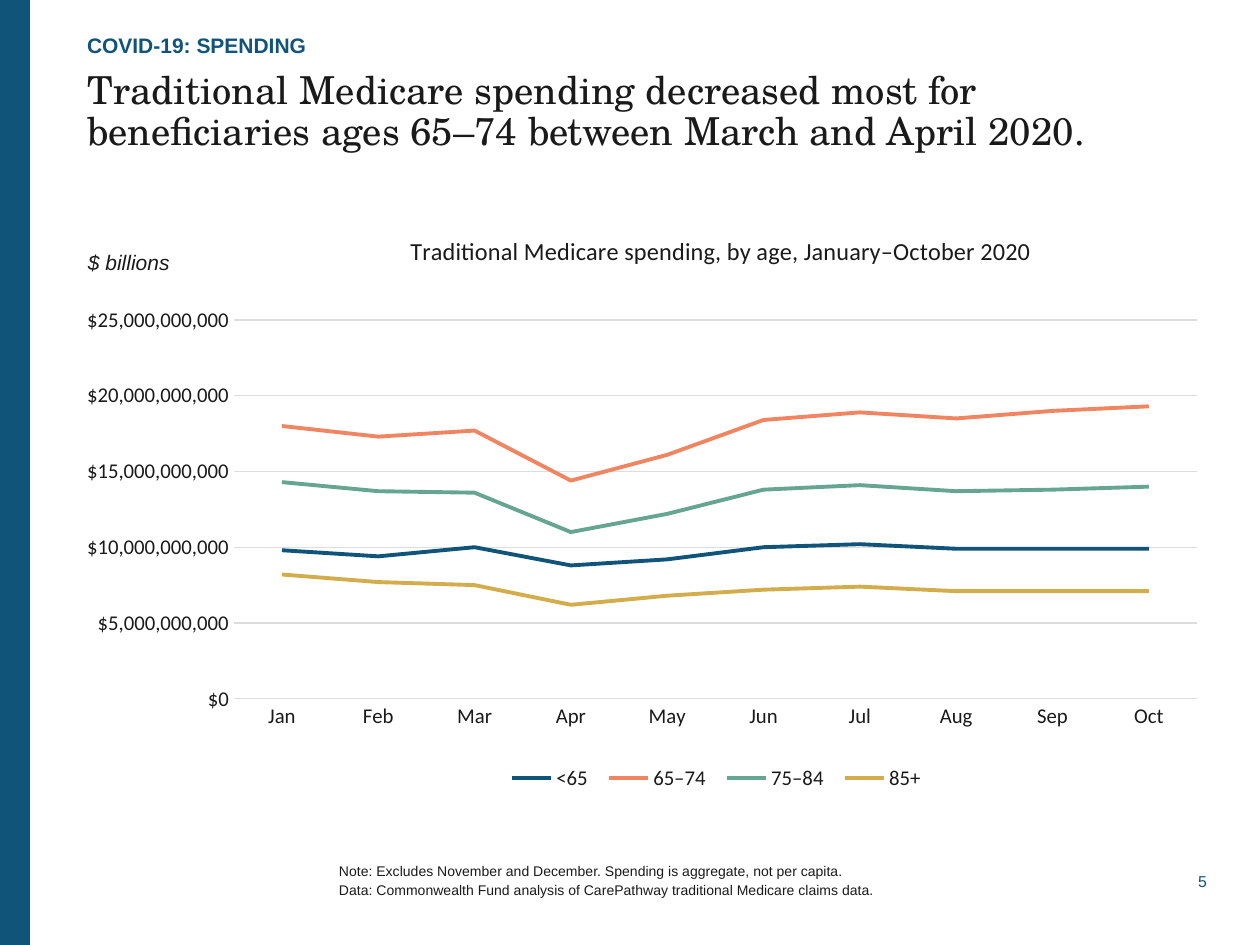
from lxml import etree
from pptx import Presentation
from pptx.chart.data import CategoryChartData
from pptx.dml.color import RGBColor
from pptx.enum.chart import XL_CHART_TYPE, XL_LEGEND_POSITION, XL_MARKER_STYLE, XL_TICK_MARK
from pptx.enum.shapes import MSO_SHAPE
from pptx.enum.text import MSO_ANCHOR, MSO_AUTO_SIZE, PP_ALIGN
from pptx.oxml.ns import qn
from pptx.util import Pt

LINE = XL_CHART_TYPE.LINE
BELOW = XL_LEGEND_POSITION.BOTTOM
PLAIN = XL_MARKER_STYLE.NONE
NO_TICK = XL_TICK_MARK.NONE
RECT = MSO_SHAPE.RECTANGLE
TOP, MID, LOW = MSO_ANCHOR.TOP, MSO_ANCHOR.MIDDLE, MSO_ANCHOR.BOTTOM
FIXED = MSO_AUTO_SIZE.NONE
LEFT, RIGHT = PP_ALIGN.LEFT, PP_ALIGN.RIGHT

# Content
TOPIC = "COVID-19: SPENDING"
HEAD = ("Traditional Medicare spending decreased most for beneficiaries "
        "ages 65–74 between March and April 2020.")
NOTES = [
    "Note: Excludes November and December. Spending is aggregate, not per capita.",
    "Data: Commonwealth Fund analysis of CarePathway traditional Medicare claims data.",
]
UNIT = "$ billions"
PAGE = "5"
NAME = "Traditional Medicare spending, by age, January–October 2020"
MONTHS = ["Jan", "Feb", "Mar", "Apr", "May", "Jun", "Jul", "Aug", "Sep", "Oct"]
BILLION = 10 ** 9
AGES = [  # name, colour, billions of dollars
    ("<65", "115479", [9.8, 9.4, 10, 8.8, 9.2, 10, 10.2, 9.9, 9.9, 9.9]),
    ("65–74", "F08661", [18, 17.3, 17.7, 14.4, 16.1, 18.4, 18.9, 18.5, 19, 19.3]),
    ("75–84", "65A591", [14.3, 13.7, 13.6, 11, 12.2, 13.8, 14.1, 13.7, 13.8, 14]),
    ("85+", "D3AC4C", [8.2, 7.7, 7.5, 6.2, 6.8, 7.2, 7.4, 7.1, 7.1, 7.1]),
]

# Style and places, in px
INK, BLUE, GREY = "1A1A1A", "115479", "DDDDDD"
SANS, SERIF, LABEL = "Arial", "TeX Gyre Schola", "Calibri"
WIDE, HIGH = 1260, 945
CHART = (87, 200, 1115, 607)
PLOT = (223, 320, 974, 379)
TITLE = (397, 229)
LEGEND = (490, 762, 442, 32)


def px(n):
    return round(n * 914400 / 126)


def rgb(code):
    return RGBColor.from_string(code)


def style(font, size, color=INK, face=LABEL, bold=False, italic=False):
    font.size, font.name = Pt(size), face
    font.bold, font.italic = bold, italic
    font.color.rgb = rgb(color)


def write(shape, box, lines, size, color=INK, face=SANS, anchor=TOP,
          align=LEFT, lead=1.0, gap=0, wrap=True, **look):
    shape.left, shape.top, shape.width, shape.height = map(px, box)
    frame = shape.text_frame
    frame.auto_size, frame.word_wrap = FIXED, wrap
    frame.vertical_anchor = anchor
    frame.margin_left = frame.margin_right = 0
    frame.margin_top = frame.margin_bottom = 0
    for i, line in enumerate(lines):
        para = frame.add_paragraph() if i else frame.paragraphs[0]
        para.alignment, para.line_spacing = align, lead
        para.space_before = Pt(gap if i else 0)
        run = para.add_run()
        run.text = line
        style(run.font, size, color, face, **look)


def place(node, index, box, inner=False):
    """Set a chart part's layout from its px box on the slide."""
    for old in node.findall(qn("c:layout")):
        node.remove(old)
    layout = etree.Element(qn("c:layout"))
    manual = etree.SubElement(layout, qn("c:manualLayout"))
    x, y, w, h = CHART
    parts = [("xMode", "edge"), ("yMode", "edge"),
             ("x", (box[0] - x) / w), ("y", (box[1] - y) / h)]
    if inner:
        parts.insert(0, ("layoutTarget", "inner"))
    if len(box) == 4:
        parts += [("w", box[2] / w), ("h", box[3] / h)]
    for tag, val in parts:
        etree.SubElement(manual, qn("c:" + tag)).set("val", str(val))
    node.insert(index, layout)


def draw_chart(slide):
    data = CategoryChartData(number_format='"$"#,##0')
    data.categories = MONTHS
    for name, _, vals in AGES:
        data.add_series(name, [round(v * BILLION) for v in vals])
    chart = slide.shapes.add_chart(LINE, *map(px, CHART), data).chart
    style(chart.font, 10)

    # Title and legend
    chart.has_title = True
    run = chart.chart_title.text_frame.paragraphs[0].add_run()
    run.text = NAME
    style(run.font, 14)
    chart.has_legend = True
    chart.legend.position = BELOW
    chart.legend.include_in_layout = False
    style(chart.legend.font, 12)

    # Axes
    cat, val = chart.category_axis, chart.value_axis
    for axis in (cat, val):
        axis.major_tick_mark = axis.minor_tick_mark = NO_TICK
        style(axis.tick_labels.font, 12)
    val.minimum_scale, val.maximum_scale = 0, 25 * BILLION
    val.major_unit = 5 * BILLION
    val.tick_labels.number_format = '"$"#,##0'
    val.tick_labels.number_format_is_linked = False
    val.format.line.fill.background()
    val.has_major_gridlines = True
    for line in (cat.format.line, val.major_gridlines.format.line):
        line.color.rgb, line.width = rgb(GREY), Pt(0.75)

    # Lines
    for series, (_, color, _) in zip(chart.plots[0].series, AGES):
        series.smooth = False
        series.marker.style = PLAIN
        series.format.line.color.rgb = rgb(color)
        series.format.line.width = Pt(2.25)

    root = chart.element.find(qn("c:chart"))
    place(root.find(qn("c:plotArea")), 0, PLOT, inner=True)
    place(root.find(qn("c:title")), 1, TITLE)
    place(root.find(qn("c:legend")), 1, LEGEND)


def main():
    deck = Presentation()
    deck.slide_width, deck.slide_height = px(WIDE), px(HIGH)
    slide = deck.slides.add_slide(deck.slide_layouts[0])
    shapes = slide.shapes

    # Side band
    band = shapes.add_shape(RECT, 0, 0, px(30), px(HIGH))
    band.shadow.inherit = False
    band.fill.solid()
    band.fill.fore_color.rgb = rgb(BLUE)
    band.line.fill.background()

    # Headings
    write(shapes.title, (87, 71, 1115, 101), [HEAD], 22, face=SERIF, lead=0.9)
    write(slide.placeholders[1], (87, 24, 1091, 34), [TOPIC], 12, BLUE,
          anchor=LOW, bold=True)

    draw_chart(slide)

    # Unit, notes and page number
    def text(box, *args, **opts):
        write(shapes.add_textbox(*map(px, box)), box, *args, **opts)

    text((88, 249, 252, 32), [UNIT], 12, italic=True)
    text((339, 827, 830, 107), NOTES, 8, anchor=MID, gap=1.6)
    text((1168, 867, 39, 28), [PAGE], 9, BLUE, anchor=MID, align=RIGHT, wrap=False)

    deck.save("out.pptx")


if __name__ == "__main__":
    main()
